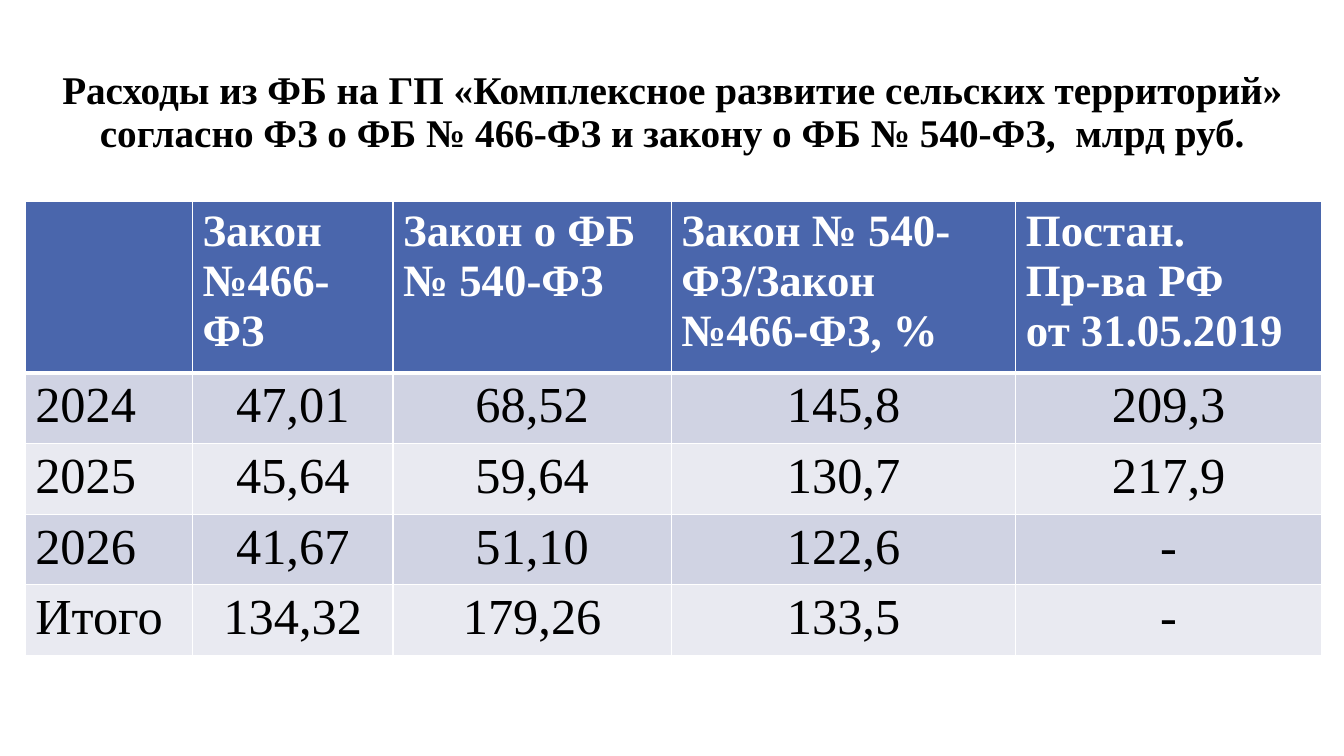
from lxml.etree import SubElement
from pptx import Presentation
from pptx.dml.color import RGBColor
from pptx.enum.text import MSO_ANCHOR as Anchor, PP_ALIGN as Align
from pptx.oxml.ns import qn
from pptx.util import Pt

FONT = "Times New Roman"
BLACK = RGBColor(0x00, 0x00, 0x00)
WHITE = RGBColor(0xFF, 0xFF, 0xFF)
HEADER_BLUE = RGBColor(0x4A, 0x66, 0xAC)
BAND_COLORS = [RGBColor(0xD0, 0xD3, 0xE3), RGBColor(0xE9, 0xEA, 0xF1)]

TITLE = (
    "Расходы из ФБ на ГП «Комплексное развитие сельских территорий» "
    "согласно ФЗ о ФБ № 466-ФЗ и закону о ФБ № 540-ФЗ,  млрд руб."
)
HEADERS = [
    "",
    "Закон №466-ФЗ",
    "Закон о ФБ № 540-ФЗ",
    "Закон № 540-ФЗ/Закон №466-ФЗ, %",
    "Постан.\nПр-ва РФ\nот 31.05.2019",
]
SPENDING = [
    ["2024", "47,01", "68,52", "145,8", "209,3"],
    ["2025", "45,64", "59,64", "130,7", "217,9"],
    ["2026", "41,67", "51,10", "122,6", "-"],
    ["Итого", "134,32", "179,26", "133,5", "-"],
]
COLUMN_WIDTHS = [119.5, 143.3, 198.7, 246.2, 218.2]
HEADER_HEIGHT = 113
ROW_HEIGHT = 47


def write_text(frame, text, size, color=BLACK, bold=False, align=Align.LEFT, spacing=None):
    frame.text = text
    for paragraph in frame.paragraphs:
        paragraph.alignment = align
        paragraph.line_spacing = spacing
        for run in paragraph.runs:
            font = run.font
            font.name, font.size, font.bold = FONT, Pt(size), bold
            font.color.rgb = color


def add_title(slide):
    box = slide.shapes.add_textbox(Pt(31.7), Pt(28.8), Pt(897), Pt(104.4))
    frame = box.text_frame
    frame.word_wrap = True
    frame.vertical_anchor = Anchor.MIDDLE
    write_text(frame, TITLE, 28, bold=True, align=Align.CENTER, spacing=0.9)


def set_borders(cell, **widths):
    properties = cell._tc.get_or_add_tcPr()
    for position, side in enumerate("LRTB"):
        line = SubElement(properties, qn(f"a:ln{side}"), w=str(int(Pt(widths.get(side, 1)))))
        fill = SubElement(line, qn("a:solidFill"))
        SubElement(fill, qn("a:srgbClr"), val=str(WHITE))
        properties.insert(position, line)


def fill_cell(cell, text, background, borders, **text_format):
    cell.fill.solid()
    cell.fill.fore_color.rgb = background
    set_borders(cell, **borders)
    write_text(cell.text_frame, text, **text_format)


def add_spending_table(slide):
    heights = [HEADER_HEIGHT] + [ROW_HEIGHT] * len(SPENDING)
    table = slide.shapes.add_table(
        len(heights), len(HEADERS), Pt(18), Pt(144), Pt(sum(COLUMN_WIDTHS)), Pt(sum(heights))
    ).table
    for column, width in zip(table.columns, COLUMN_WIDTHS):
        column.width = Pt(width)
    for row, height in zip(table.rows, heights):
        row.height = Pt(height)
    for index, header in enumerate(HEADERS):
        fill_cell(table.cell(0, index), header, HEADER_BLUE, {"B": 3},
                  size=32, color=WHITE, bold=True)
    for row_index, values in enumerate(SPENDING):
        borders = {"T": 3} if row_index == 0 else {}
        for index, value in enumerate(values):
            fill_cell(table.cell(row_index + 1, index), value, BAND_COLORS[row_index % 2], borders,
                      size=36, align=Align.CENTER if index else Align.LEFT)


def main():
    presentation = Presentation()
    presentation.slide_width, presentation.slide_height = Pt(960), Pt(540)
    slide = presentation.slides.add_slide(presentation.slide_layouts[6])
    add_title(slide)
    add_spending_table(slide)
    presentation.save("out.pptx")


if __name__ == "__main__":
    main()
